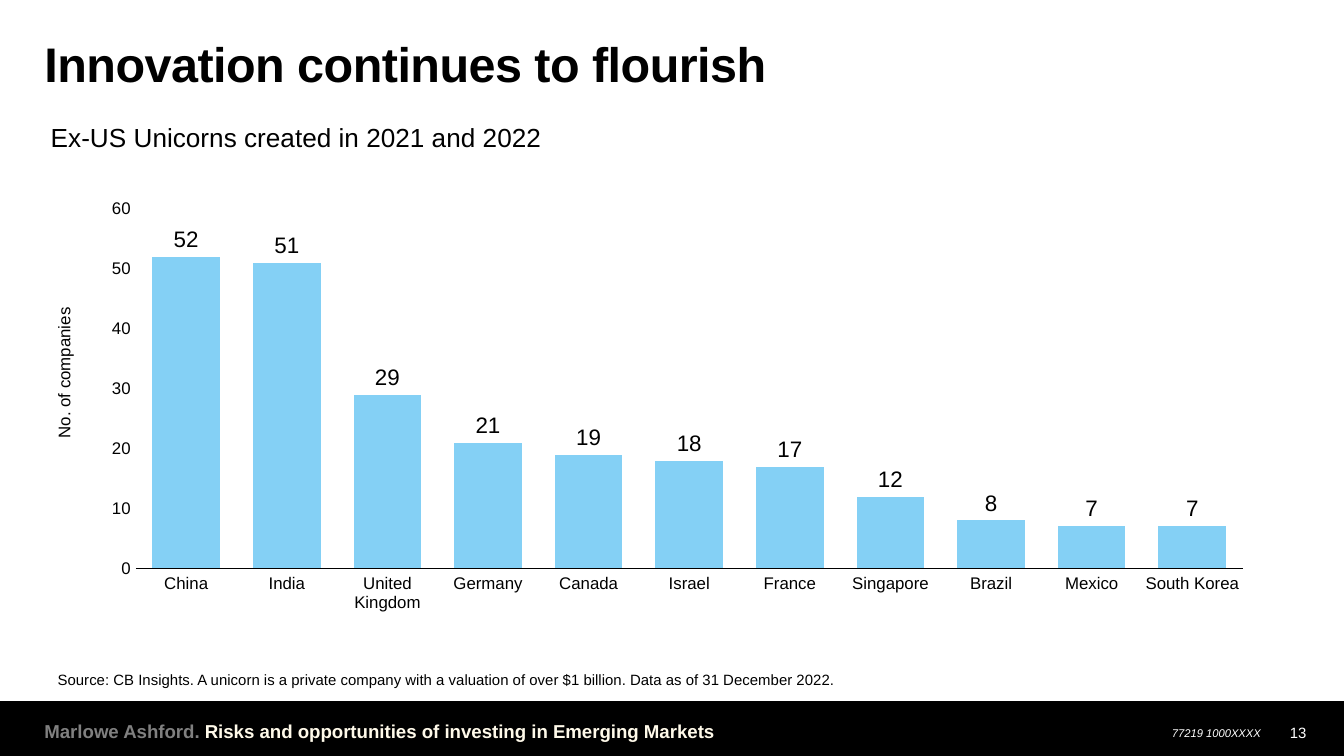
import pptx
import pptx.chart.data
import pptx.dml.color
import pptx.enum.chart
import pptx.enum.shapes
import pptx.enum.text
import pptx.oxml
import pptx.oxml.ns
import pptx.util
from pptx.util import Cm

BLACK = pptx.dml.color.RGBColor(0x00, 0x00, 0x00)
WHITE = pptx.dml.color.RGBColor(0xFF, 0xFF, 0xFF)
GREY = pptx.dml.color.RGBColor(0x80, 0x80, 0x80)
CREAM = pptx.dml.color.RGBColor(0xFF, 0xFA, 0xEA)
SKY = pptx.dml.color.RGBColor(0x84, 0xD0, 0xF5)
FONT = "Arial"
RIGHT = pptx.enum.text.PP_ALIGN.RIGHT
BOTTOM = pptx.enum.text.MSO_ANCHOR.BOTTOM


def set_font(font, size, color=BLACK):
    font.name = FONT
    font.size = pptx.util.Pt(size)
    font.color.rgb = color


def add_text(left, top, width, height, spans, size, inset=True, align=None, anchor=None):
    """Add a one-paragraph box; spans holds (text, color) pairs."""
    box = page.shapes.add_textbox(Cm(left), Cm(top), Cm(width), Cm(height))
    frame = box.text_frame
    frame.word_wrap = True
    frame.vertical_anchor = anchor
    if not inset:
        frame.margin_left = frame.margin_right = 0
        frame.margin_top = frame.margin_bottom = 0
    para = frame.paragraphs[0]
    para.alignment = align
    for text, color in spans:
        span = para.add_run()
        span.text = text
        set_font(span.font, size, color)
    return para


deck = pptx.Presentation()
deck.slide_width, deck.slide_height = Cm(25.4), Cm(14.29)
page = deck.slides.add_slide(deck.slide_layouts[6])

# Footer band
band = page.shapes.add_shape(
    pptx.enum.shapes.MSO_SHAPE.RECTANGLE, 0, Cm(13.27), deck.slide_width, Cm(1.02))
band.shadow.inherit = False
band.fill.solid()
band.fill.fore_color.rgb = BLACK
band.line.color.rgb = BLACK
band.line.width = pptx.util.Pt(0.75)

# Footer text
para = add_text(18.11, 13.51, 5.72, 0.48, [("77219 1000XXXX", WHITE)], 6, False, RIGHT, BOTTOM)
para.runs[0].font.italic = True
para = add_text(
    0.84, 13.56, 13.41, 0.48,
    [("Marlowe Ashford. ", GREY),
     ("Risks and opportunities of investing in Emerging Markets", CREAM)],
    10, False, anchor=BOTTOM)
for span in para.runs:
    span.font.bold = True
add_text(23.93, 13.54, 0.76, 0.48, [("13", WHITE)], 8, False, RIGHT, BOTTOM)

# Title, subtitle and source
para = add_text(0.84, 0.76, 23.85, 1.09, [("Innovation continues to flourish", BLACK)], 26, False)
para.line_spacing = 0.9
para.runs[0].font.bold = True
para.runs[0].font._element.set("spc", "-30")
para = add_text(0.71, 2.26, 12.17, 0.76, [("Ex-US Unicorns created in 2021 and 2022", BLACK)], 14)
para.line_spacing = pptx.util.Pt(14)
para = add_text(
    0.84, 12.57, 17.83, 0.56,
    [("Source: CB Insights. A unicorn is a private company with a valuation of over "
      "$1 billion. Data as of 31 December 2022.", BLACK)], 8)
para.line_spacing = pptx.util.Pt(9)

# Column chart
data = pptx.chart.data.CategoryChartData()
data.categories = ["China", "India", "United Kingdom", "Germany", "Canada", "Israel",
                   "France", "Singapore", "Brazil", "Mexico", "South Korea"]
data.add_series("Series 1", [52, 51, 29, 21, 19, 18, 17, 12, 8, 7, 7])
chart = page.shapes.add_chart(
    pptx.enum.chart.XL_CHART_TYPE.COLUMN_CLUSTERED,
    Cm(0.71), Cm(3.63), Cm(23.24), Cm(8.18), data).chart
chart.has_legend = False
chart.has_title = False
set_font(chart.font, 10)

# Columns and labels
plot = chart.plots[0]
plot.vary_by_categories = False
plot.gap_width = 49
plot.overlap = -27
columns = plot.series[0]
columns.format.fill.solid()
columns.format.fill.fore_color.rgb = SKY
labels = columns.data_labels
labels.show_value = True
labels.position = pptx.enum.chart.XL_LABEL_POSITION.OUTSIDE_END
set_font(labels.font, 12)

# Axes
for axis in (chart.category_axis, chart.value_axis):
    axis.has_major_gridlines = False
    axis.major_tick_mark = axis.minor_tick_mark = pptx.enum.chart.XL_TICK_MARK.NONE
    set_font(axis.tick_labels.font, 9)
chart.category_axis.format.line.color.rgb = BLACK
chart.category_axis.format.line.width = pptx.util.Pt(0.75)
values = chart.value_axis
values.format.line.fill.background()
values.minimum_scale, values.maximum_scale, values.major_unit = 0, 60, 10
title_para = values.axis_title.text_frame.paragraphs[0]
title_para.text = "No. of companies"
set_font(title_para.font, 9)
title_para.font.bold = False

# Fixed places for the plot area and the axis title, as shares of the chart
plot_area = chart._chartSpace.chart.plotArea
axis_title = values.axis_title._element
places = [
    (plot_area, {"layoutTarget": "inner", "xMode": "edge", "yMode": "edge",
                 "x": 0.08, "y": 0.04, "w": 0.9, "h": 0.83}),
    (axis_title, {"xMode": "edge", "yMode": "edge", "x": 0.01, "y": 0.26}),
]
for parent, settings in places:
    for old in parent.findall(pptx.oxml.ns.qn("c:layout")):
        parent.remove(old)
    items = "".join(f'<c:{name} val="{value}"/>' for name, value in settings.items())
    layout = pptx.oxml.parse_xml(
        f'<c:layout {pptx.oxml.ns.nsdecls("c")}><c:manualLayout>{items}</c:manualLayout></c:layout>')
    parent.insert(0 if parent is plot_area else 1, layout)

deck.save("out.pptx")
